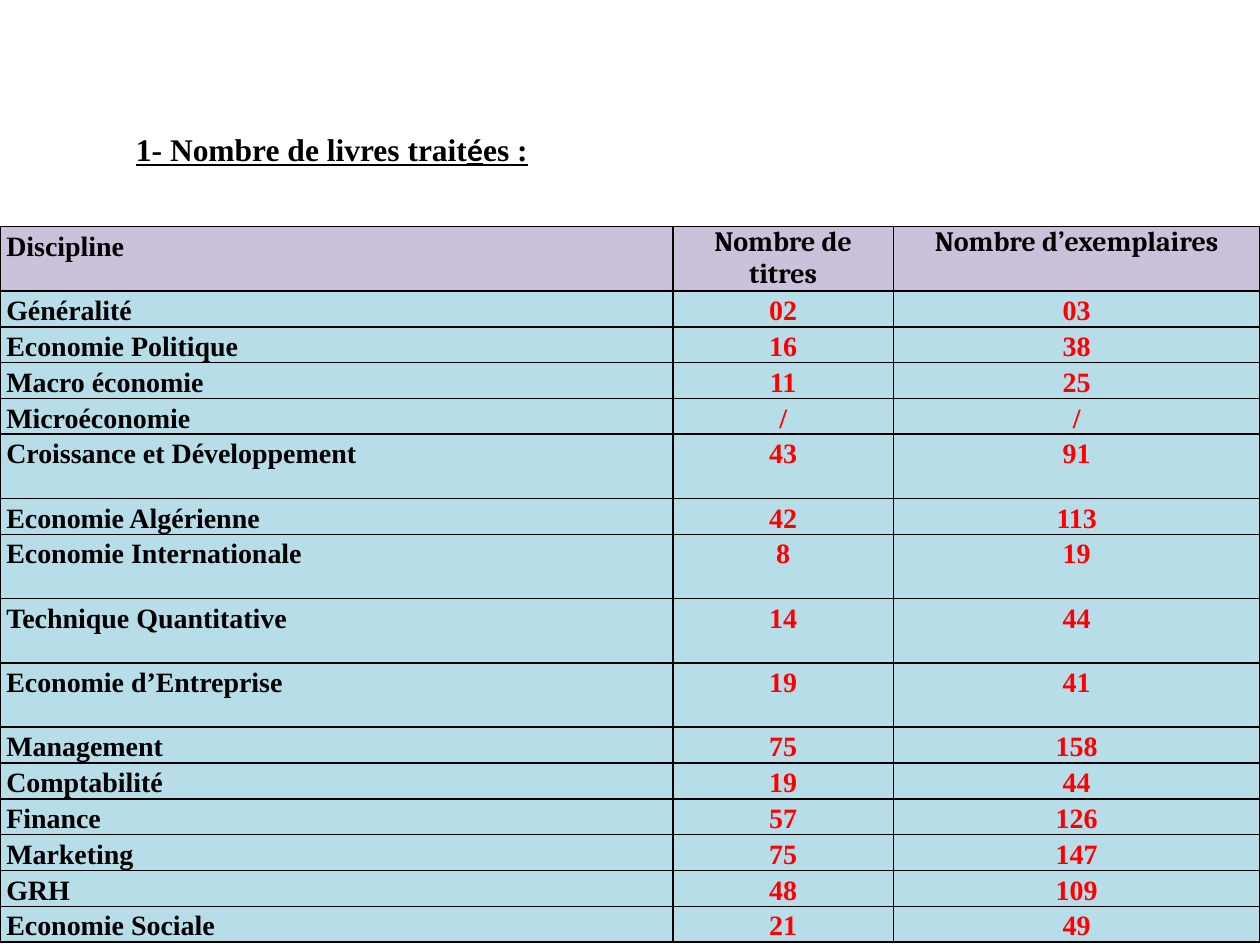
import dataclasses

import lxml.etree
import pptx
import pptx.dml.color
import pptx.enum.text
import pptx.oxml.ns
import pptx.util

Pt = pptx.util.Pt
ALIGN = pptx.enum.text.PP_ALIGN
ANCHOR = pptx.enum.text.MSO_ANCHOR


@dataclasses.dataclass(frozen=True)
class Theme:
    ink: str = "000000"
    figure: str = "FF0000"
    header_fill: str = "CCC1DA"
    body_fill: str = "B7DEE8"
    title_size: int = 18
    table_size: int = 16
    border_width: int = 1
    serif: str = "Times New Roman"
    header_font: str = "Cambria"
    accent_font: str = "Calibri"
    line_spacing: float = 1.15


HEADERS = ("Discipline", "Nombre de\vtitres", "Nombre d’exemplaires")
BOOKS = (
    ("Généralité", "02", "03"),
    ("Economie Politique", "16", "38"),
    ("Macro économie", "11", "25"),
    ("Microéconomie", "/", "/"),
    ("Croissance et Développement", "43", "91"),
    ("Economie Algérienne", "42", "113"),
    ("Economie Internationale", "8", "19"),
    ("Technique Quantitative", "14", "44"),
    ("Economie d’Entreprise", "19", "41"),
    ("Management", "75", "158"),
    ("Comptabilité", "19", "44"),
    ("Finance", "57", "126"),
    ("Marketing", "75", "147"),
    ("GRH", "48", "109"),
    ("Economie Sociale", "21", "49"),
)
TALL_ROWS = {
    "Croissance et Développement",
    "Economie Internationale",
    "Technique Quantitative",
    "Economie d’Entreprise",
}
FIRST_JUSTIFIED_ROW = 7
COLUMN_WIDTHS = (384.5, 126, 209.5)
HEADER_HEIGHT, ROW_HEIGHT, TALL_HEIGHT = 30.25, 18.75, 36.75


def apply_format(target, values):
    for name, value in values.items():
        setattr(target, name, value)


class SlideBuilder:
    def __init__(self, slide, theme):
        self.slide = slide
        self.theme = theme

    def style_span(self, span, color, **values):
        apply_format(span.font, {"bold": True, **values})
        span.font.color.rgb = pptx.dml.color.RGBColor.from_string(color)

    def add_title(self, left, top, width, height, pieces):
        """Fill the title placeholder with (text, font name) pieces."""
        box = self.slide.shapes.title
        apply_format(box, {"left": Pt(left), "top": Pt(top),
                           "width": Pt(width), "height": Pt(height)})
        apply_format(box.text_frame, {
            "word_wrap": False,
            "vertical_anchor": ANCHOR.MIDDLE,
            "auto_size": pptx.enum.text.MSO_AUTO_SIZE.NONE,
        })
        para = box.text_frame.paragraphs[0]
        para.alignment = ALIGN.LEFT
        for text, font in pieces:
            span = para.add_run()
            span.text = text
            self.style_span(span, self.theme.ink, name=font, underline=True,
                            size=Pt(self.theme.title_size))

    def add_borders(self, cell):
        properties = cell._tc.get_or_add_tcPr()
        qn = pptx.oxml.ns.qn
        for index, side in enumerate(("a:lnL", "a:lnR", "a:lnT", "a:lnB")):
            line = lxml.etree.Element(
                qn(side), w=str(Pt(self.theme.border_width)))
            fill = lxml.etree.SubElement(line, qn("a:solidFill"))
            lxml.etree.SubElement(fill, qn("a:srgbClr"), val=self.theme.ink)
            properties.insert(index, line)

    def fill_cell(self, cell, text, fill, color, font, alignment, spacing):
        apply_format(cell, {"margin_left": Pt(3.6), "margin_right": Pt(3.6),
                            "margin_top": 0, "margin_bottom": 0})
        cell.fill.solid()
        cell.fill.fore_color.rgb = pptx.dml.color.RGBColor.from_string(fill)
        self.add_borders(cell)
        para = cell.text_frame.paragraphs[0]
        para.text = text
        apply_format(para, {"alignment": alignment, "line_spacing": spacing})
        for span in para.runs:
            self.style_span(span, color, name=font,
                            size=Pt(self.theme.table_size))

    def add_table(self, left, top, widths, heights, rows):
        theme = self.theme
        table = self.slide.shapes.add_table(
            len(rows), len(widths), Pt(left), Pt(top),
            Pt(sum(widths)), Pt(sum(heights))).table
        apply_format(table, {"first_row": False, "horz_banding": False})
        for column, width in zip(table.columns, widths):
            column.width = Pt(width)
        for row, height in zip(table.rows, heights):
            row.height = Pt(height)
        for row_index, row in enumerate(rows):
            is_header = row_index == 0
            label_align = (ALIGN.JUSTIFY if row_index >= FIRST_JUSTIFIED_ROW
                           else ALIGN.LEFT)
            for column_index, text in enumerate(row):
                is_label = column_index == 0
                special = is_header and not is_label
                self.fill_cell(
                    table.cell(row_index, column_index), text,
                    fill=theme.header_fill if is_header else theme.body_fill,
                    color=theme.ink if is_header or is_label else theme.figure,
                    font=theme.header_font if special else theme.serif,
                    alignment=label_align if is_label else ALIGN.CENTER,
                    spacing=None if special else theme.line_spacing)


def main():
    deck = pptx.Presentation()
    apply_format(deck, {"slide_width": Pt(720), "slide_height": Pt(540)})
    theme = Theme()
    title_only = deck.slide_layouts[5]
    builder = SlideBuilder(deck.slides.add_slide(title_only), theme)
    builder.add_title(70.5, 70, 240.5, 30, (
        ("1- Nombre de livres trait", theme.serif),
        ("é", theme.accent_font),
        ("es :", theme.serif),
    ))
    heights = [HEADER_HEIGHT] + [
        TALL_HEIGHT if name in TALL_ROWS else ROW_HEIGHT
        for name, *_ in BOOKS]
    builder.add_table(0, 129.5, COLUMN_WIDTHS, heights, (HEADERS, *BOOKS))
    deck.save("out.pptx")


if __name__ == "__main__":
    main()
